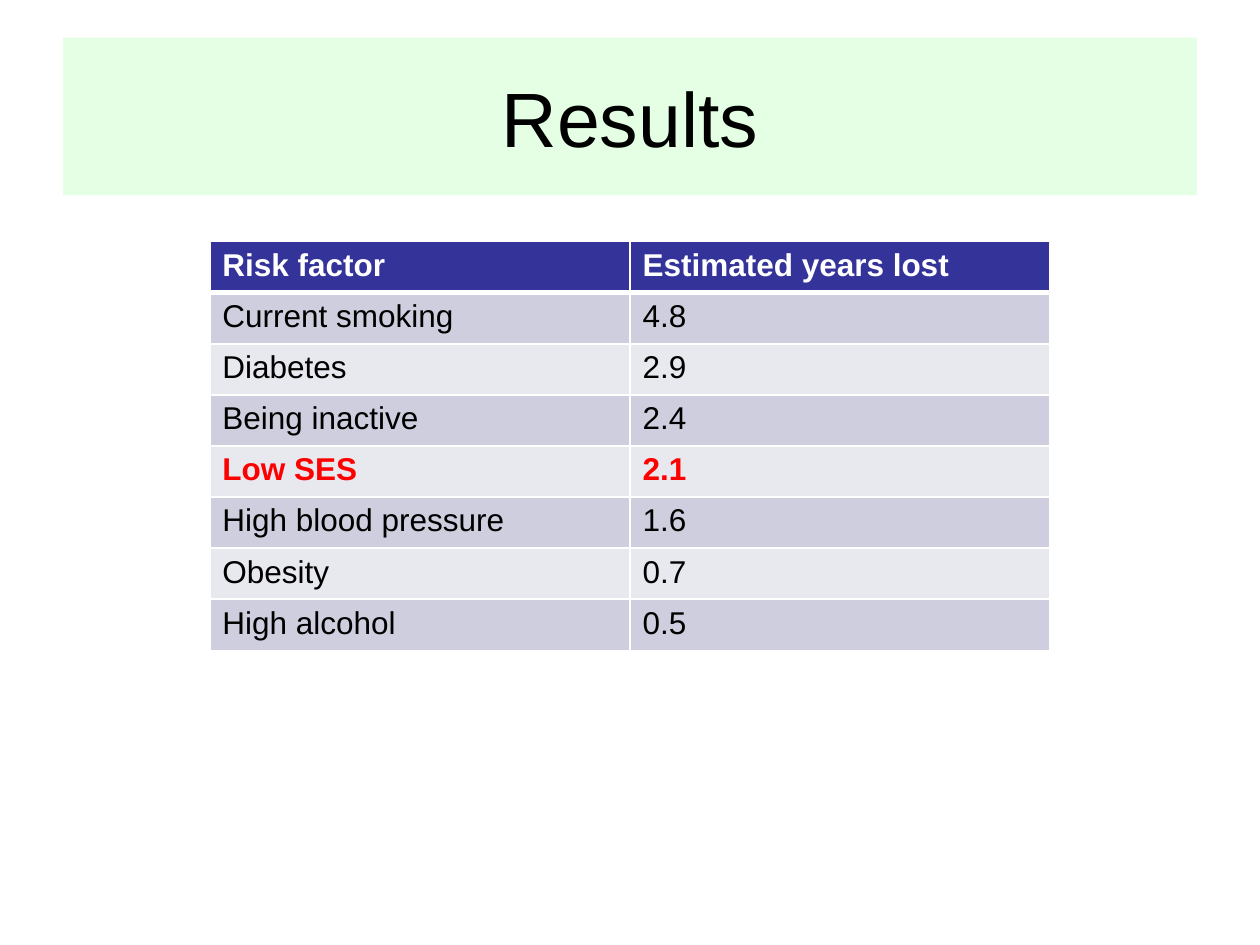
"""Build the results slide with a table of years lost by risk factor."""
from dataclasses import dataclass

from lxml.etree import SubElement
from pptx import Presentation
from pptx.dml.color import RGBColor
from pptx.enum.text import MSO_ANCHOR, PP_ALIGN
from pptx.oxml.ns import qn
from pptx.util import Cm, Pt


@dataclass(frozen=True)
class Theme:
    font: str = "Arial"
    title_size: int = 44
    table_size: int = 18
    title_fill: str = "CCFFCC"
    header_fill: str = "333399"
    odd_fill: str = "CECEDE"
    even_fill: str = "E8E8EF"
    text: str = "000000"
    white: str = "FFFFFF"
    highlight: str = "FF0000"


def style_font(font, size, color, bold=False):
    font.name = theme.font
    font.size = Pt(size)
    font.bold = bold
    font.color.rgb = RGBColor.from_string(color)


def add_border(cell, side, width):
    line = SubElement(cell._tc.get_or_add_tcPr(), qn(f"a:ln{side}"), w=str(Pt(width)))
    fill = SubElement(line, qn("a:solidFill"))
    SubElement(fill, qn("a:srgbClr"), val=theme.white)


theme = Theme()
rows = [
    ("Risk factor", "Estimated years lost"),
    ("Current smoking", "4.8"),
    ("Diabetes", "2.9"),
    ("Being inactive", "2.4"),
    ("Low SES", "2.1"),
    ("High blood pressure", "1.6"),
    ("Obesity", "0.7"),
    ("High alcohol", "0.5"),
]
highlighted = "Low SES"

deck = Presentation()
deck.slide_width, deck.slide_height = Cm(25.4), Cm(19.05)
page = deck.slides.add_slide(deck.slide_layouts[5])

title = page.shapes.title
title.left, title.top, title.width, title.height = Cm(1.27), Cm(0.76), Cm(22.86), Cm(3.18)
title.fill.solid()
title.fill.fore_color.rgb = RGBColor.from_string(theme.title_fill)
title_color = title._element.spPr.find(qn("a:solidFill")).find(qn("a:srgbClr"))
SubElement(title_color, qn("a:alpha"), val="50000")
title.text_frame.text = "Results"
title.text_frame.vertical_anchor = MSO_ANCHOR.MIDDLE
para = title.text_frame.paragraphs[0]
para.alignment = PP_ALIGN.CENTER
style_font(para.font, theme.title_size, theme.text)

row_height = Cm(1.03)
frame = page.shapes.add_table(
    len(rows), 2, Cm(4.23), Cm(4.87), Cm(16.94), row_height * len(rows)
)
table = frame.table
for row_index, row in enumerate(rows):
    table.rows[row_index].height = row_height
    is_header = row_index == 0
    is_highlighted = row[0] == highlighted
    if is_header:
        fill, color = theme.header_fill, theme.white
    else:
        fill = theme.odd_fill if row_index % 2 else theme.even_fill
        color = theme.highlight if is_highlighted else theme.text
    for column_index, text in enumerate(row):
        cell = table.cell(row_index, column_index)
        cell.text = text
        style_font(
            cell.text_frame.paragraphs[0].font,
            theme.table_size,
            color,
            is_header or is_highlighted,
        )
        for side in "LRTB":
            thick = (is_header and side == "B") or (row_index == 1 and side == "T")
            add_border(cell, side, 3 if thick else 1)
        cell.fill.solid()
        cell.fill.fore_color.rgb = RGBColor.from_string(fill)

deck.save("out.pptx")
